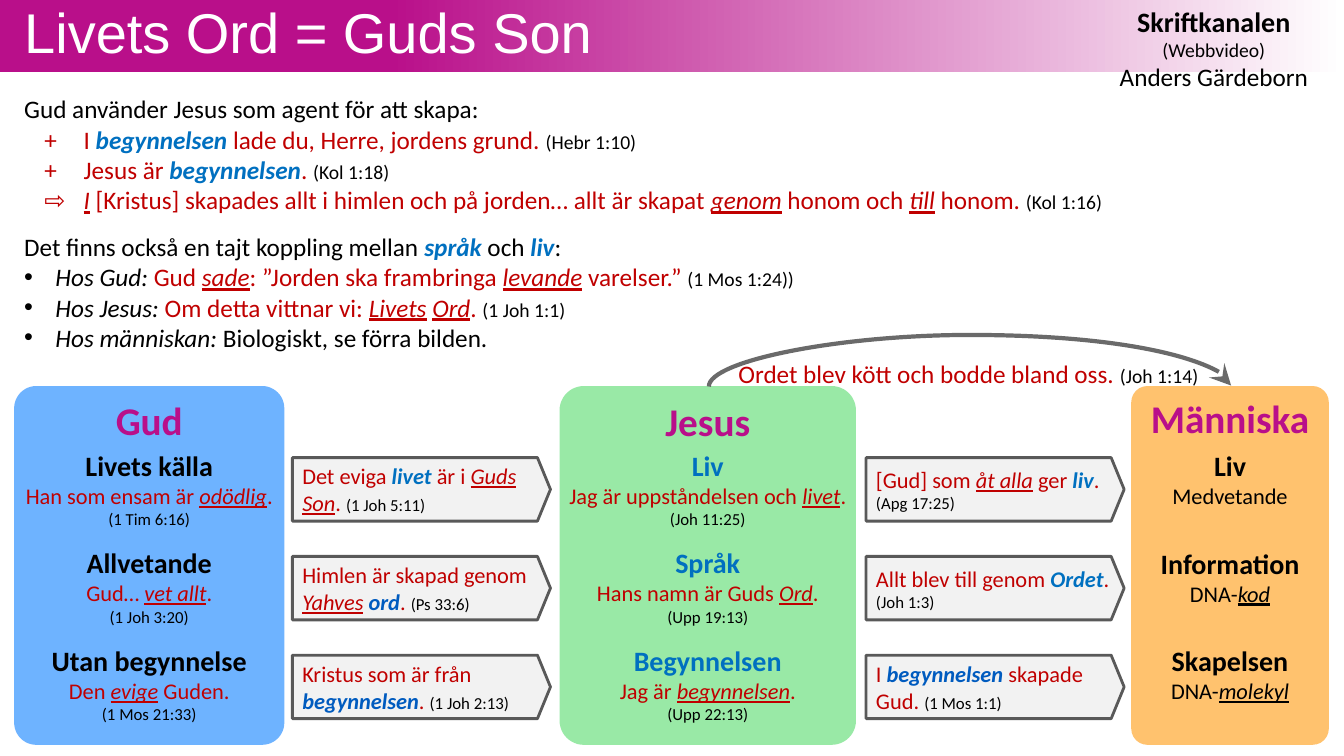
from lxml import etree
from pptx import Presentation
from pptx.dml.color import RGBColor
from pptx.enum.shapes import MSO_CONNECTOR, MSO_SHAPE
from pptx.enum.text import MSO_ANCHOR, PP_ALIGN
from pptx.oxml.ns import qn
from pptx.util import Inches, Pt

BLACK, RED, BLUE, DEEP_BLUE = "000000", "C00000", "0070C0", "005BBF"
PURPLE, WHITE = "B90F8A", "FFFFFF"
COLUMN_TOP, COLUMN_HEIGHT = 3.83, 3.56
ROW_TOP, ROW_STEP = 4.54, 0.98


def color(hex_string):
    """Return the colour for a hex string."""
    return RGBColor.from_string(hex_string)


def child(parent, tag, **attributes):
    """Append a drawing element with the given attributes."""
    return etree.SubElement(parent, qn(tag), attributes)


def write(paragraph, runs, size, font="Calibri"):
    """Write (text, colour, marks) runs; s is four points smaller, l two larger."""
    paragraph.font.name = font
    paragraph.font.size = Pt(size)
    for text, hex_string, marks in runs:
        run = paragraph.add_run()
        run.text = text
        run.font.color.rgb = color(hex_string)
        if "s" in marks or "l" in marks:
            run.font.size = Pt(size - 4 if "s" in marks else size + 2)
        if "b" in marks:
            run.font.bold = True
        if "i" in marks:
            run.font.italic = True
        if "u" in marks:
            run.font.underline = True


def prepare_frame(shape, margins, anchor=MSO_ANCHOR.TOP, wrap=True):
    """Set margins (left, top, right, bottom), anchor and wrapping."""
    frame = shape.text_frame
    frame.word_wrap = wrap
    frame.vertical_anchor = anchor
    (frame.margin_left, frame.margin_top,
     frame.margin_right, frame.margin_bottom) = map(Inches, margins)
    return frame


def add_text_box(slide, box, margins=(0, 0, 0, 0), **options):
    """Add a text box and return its text frame."""
    return prepare_frame(slide.shapes.add_textbox(*map(Inches, box)), margins, **options)


def add_shape(slide, kind, box, fill):
    """Add a flat filled shape without outline."""
    shape = slide.shapes.add_shape(kind, *map(Inches, box))
    shape.shadow.inherit = False
    shape.fill.solid()
    shape.fill.fore_color.rgb = color(fill)
    shape.line.fill.background()
    return shape


def next_paragraph(frame, index):
    """Return the first paragraph for index 0, otherwise a new one."""
    return frame.add_paragraph() if index else frame.paragraphs[0]


def add_header(slide, left, top, width, height):
    """Draw the gradient band with title and author."""
    band = add_shape(slide, MSO_SHAPE.RECTANGLE, (left, top, width, height), PURPLE)
    band.fill.gradient()
    band.fill.gradient_angle = 0
    for stop, position, hex_string in zip(band.fill.gradient_stops, (0.29, 1), (PURPLE, WHITE)):
        stop.position = position
        stop.color.rgb = color(hex_string)
    author = add_text_box(slide, (left + width - 2.57, top + 0.04, 2.56, 0.64),
                          (0.1, 0, 0.1, 0), wrap=False)
    lines = [[("Skriftkanalen", BLACK, "bl"), (" ", BLACK, ""), ("(Webbvideo)", BLACK, "s")],
             [("Anders Gärdeborn", BLACK, "")]]
    for index, runs in enumerate(lines):
        paragraph = next_paragraph(author, index)
        paragraph.alignment = PP_ALIGN.CENTER
        write(paragraph, runs, 18)
    title = add_text_box(slide, (left, top, width, height), (0.24, 0.05, 0.1, 0.05))
    title.paragraphs[0].line_spacing = 0.9
    write(title.paragraphs[0], [("Livets Ord = Guds Son", WHITE, "")], 40, "Arial")


def add_body(slide, left, top, width, height):
    """Write the two introductory lists."""
    frame = add_text_box(slide, (left, top, width, height), (0.24, 0.05, 0.1, 0.05))
    lines = [
        ("lead", [("Gud använder Jesus som agent för att skapa:", BLACK, "")]),
        ("tabs", [("\t+\tI ", RED, ""), ("begynnelsen", BLUE, "bi"),
                  (" lade du, Herre, jordens grund. ", RED, ""), ("(Hebr 1:10)", BLACK, "s")]),
        ("tabs", [("\t+\tJesus är ", RED, ""), ("begynnelsen", BLUE, "bi"),
                  (". ", RED, ""), ("(Kol 1:18)", BLACK, "s")]),
        ("tabs", [("\t⇨\t", RED, ""), ("I", RED, "iu"),
                  (" [Kristus] skapades allt i himlen och på jorden… allt är skapat ", RED, ""),
                  ("genom", RED, "iu"), (" honom och ", RED, ""), ("till", RED, "iu"),
                  (" honom. ", RED, ""), ("(Kol 1:16)", BLACK, "s")]),
        ("lead", [("Det finns också en tajt koppling mellan ", BLACK, ""), ("språk", BLUE, "bi"),
                  (" och ", BLACK, ""), ("liv", BLUE, "bi"), (":", BLACK, "")]),
        ("bullet", [("Hos Gud: ", BLACK, "i"), ("Gud ", RED, ""), ("sade", RED, "iu"),
                    (": ”Jorden ska frambringa ", RED, ""), ("levande", RED, "iu"),
                    (" varelser.” ", RED, ""), ("(1 Mos 1:24))", BLACK, "s")]),
        ("bullet", [("Hos Jesus: ", BLACK, "i"), ("Om detta vittnar vi: ", RED, ""),
                    ("Livets", RED, "iu"), (" ", RED, ""), ("Ord", RED, "iu"),
                    (". ", RED, ""), ("(1 Joh 1:1)", BLACK, "s")]),
        ("bullet", [("Hos människan: ", BLACK, "i"), ("Biologiskt, se förra bilden.", BLACK, "")]),
    ]
    for index, (kind, runs) in enumerate(lines):
        paragraph = next_paragraph(frame, index)
        properties = paragraph._p.get_or_add_pPr()
        if kind == "tabs":
            tab_list = child(properties, "a:tabLst")
            for position in (0.2, 0.59):
                child(tab_list, "a:tab", pos=str(Inches(position)), algn="l")
        elif kind == "bullet":
            properties.set("marL", str(Inches(0.31)))
            properties.set("indent", str(-Inches(0.31)))
            child(properties, "a:buFont", typeface="Arial")
            child(properties, "a:buChar", char="•")
        elif index:
            paragraph.space_before = Pt(12)
        write(paragraph, runs, 18)


def add_column(slide, left, top, width, height, fill, heading, heading_color, groups, gap):
    """Draw a rounded column with a heading and groups of centred lines."""
    panel = add_shape(slide, MSO_SHAPE.ROUNDED_RECTANGLE, (left, top, width, height), fill)
    panel.adjustments[0] = 0.082
    child(panel.fill.fore_color._xFill.find(qn("a:srgbClr")), "a:alpha", val="57000")
    frame = prepare_frame(panel, (0, 0.04, 0, 0))
    frame.paragraphs[0].alignment = PP_ALIGN.CENTER
    write(frame.paragraphs[0], [(heading, PURPLE, "b")], 28)
    details = add_text_box(slide, (left, top + 0.62, width, height - 0.8))
    for number, (name, verse, reference) in enumerate(groups):
        lines = [([(name, heading_color, "b")], 20), (verse, 16)]
        if reference:
            lines.append(([(reference, BLACK, "")], 12))
        for index, (runs, size) in enumerate(lines):
            paragraph = next_paragraph(details, number + index)
            paragraph.alignment = PP_ALIGN.CENTER
            if number and not index:
                paragraph.space_before = Pt(gap)
            write(paragraph, runs, size)


def add_arrows(slide, left, top, width, height, verses):
    """Stack the arrows that hold the verses between two columns."""
    for row, runs in enumerate(verses):
        arrow = add_shape(slide, MSO_SHAPE.RIGHT_ARROW,
                          (left, top + row * ROW_STEP, width, height), "F2F2F2")
        arrow.adjustments[0], arrow.adjustments[1] = 1, 0.205
        arrow.line.color.rgb = color("595959")
        arrow.line.width = Pt(2)
        frame = prepare_frame(arrow, (0.1, 0.05, 0, 0.05), MSO_ANCHOR.MIDDLE)
        frame.paragraphs[0].alignment = PP_ALIGN.LEFT
        write(frame.paragraphs[0], runs, 16)


def add_arc(slide, left, top, width, height):
    """Draw the curved arrow from Jesus to Människa with its verse."""
    caption = add_text_box(slide, (left + 0.15, top - 0.1, 4.85, 0.98), anchor=MSO_ANCHOR.MIDDLE)
    caption.paragraphs[0].alignment = PP_ALIGN.CENTER
    write(caption.paragraphs[0], [("Ordet blev kött och bodde bland oss. ", RED, ""),
                                  ("(Joh 1:14)", BLACK, "s")], 18)
    middle, base, thin = left + width / 2, top + height, 0.01
    arc = slide.shapes.add_connector(
        MSO_CONNECTOR.CURVE, Inches(middle + thin / 2), Inches(base + width / 2),
        Inches(middle - thin / 2), Inches(base - width / 2))
    arc._element.spPr.find(qn("a:xfrm")).set("rot", "5400000")
    guides = arc._element.spPr.find(qn("a:prstGeom")).get_or_add_avLst()
    child(guides, "a:gd", name="adj1", fmla=f"val {round(height / thin * 100000)}")
    arc.line.color.rgb = color("6A6A6A")
    arc.line.width = Pt(3)
    child(arc.line._get_or_add_ln(), "a:tailEnd", type="stealth", w="lg", len="lg")
    child(arc._element.spPr, "a:effectLst")


def main():
    """Build and save the slide."""
    presentation = Presentation()
    presentation.slide_width, presentation.slide_height = Inches(13.33), Inches(7.5)
    slide = presentation.slides.add_slide(presentation.slide_layouts[6])
    add_header(slide, 0, 0, 13.33, 0.71)
    add_body(slide, 0, 0.88, 12, 2.69)
    dot = (".", RED, "")
    columns = [
        (0.14, 2.68, "007AFF", "Gud", BLACK, 12, [
            ("Livets källa", [("Han som ensam är ", RED, ""), ("odödlig", RED, "iu"), dot], "(1 Tim 6:16)"),
            ("Allvetande", [("Gud… ", RED, ""), ("vet allt", RED, "iu"), dot], "(1 Joh 3:20)"),
            ("Utan begynnelse", [("Den ", RED, ""), ("evige", RED, "iu"), (" Guden.", RED, "")], "(1 Mos 21:33)")]),
        (5.55, 2.94, "4CD964", "Jesus", BLUE, 12, [
            ("Liv", [("Jag är uppståndelsen och ", RED, ""), ("livet", RED, "iu"), dot], "(Joh 11:25)"),
            ("Språk", [("Hans namn är Guds ", RED, ""), ("Ord", RED, "iu"), dot], "(Upp 19:13)"),
            ("Begynnelsen", [("Jag är ", RED, ""), ("begynnelsen", RED, "iu"), dot], "(Upp 22:13)")]),
        (11.22, 1.96, "FF9500", "Människa", BLACK, 26.6, [
            ("Liv", [("Medvetande", BLACK, "")], ""),
            ("Information", [("DNA-", BLACK, ""), ("kod", BLACK, "iu")], ""),
            ("Skapelsen", [("DNA-", BLACK, ""), ("molekyl", BLACK, "iu")], "")])]
    for left, width, fill, heading, heading_color, gap, groups in columns:
        add_column(slide, left, COLUMN_TOP, width, COLUMN_HEIGHT, fill, heading, heading_color, groups, gap)
    stop = (". ", RED, "")
    add_arrows(slide, 2.9, ROW_TOP, 2.56, 0.63, [
        [("Det eviga ", RED, ""), ("livet", BLUE, "bi"), (" är i ", RED, ""),
         ("Guds Son", RED, "iu"), stop, ("(1 Joh 5:11)", BLACK, "s")],
        [("Himlen är skapad genom ", RED, ""), ("Yahves", RED, "iu"), (" ord", DEEP_BLUE, "bi"),
         stop, ("(Ps 33:6)", BLACK, "s")],
        [("Kristus som är från ", RED, ""), ("begynnelsen", DEEP_BLUE, "bi"), stop, ("(1 Joh 2:13)", BLACK, "s")]])
    add_arrows(slide, 8.59, ROW_TOP, 2.56, 0.63, [
        [("[Gud] som ", RED, ""), ("åt alla", RED, "iu"), (" ger ", RED, ""), ("liv", BLUE, "bi"),
         stop, ("(Apg 17:25)", BLACK, "s")],
        [("Allt blev till genom ", RED, ""), ("Ordet", BLUE, "bi"), stop, ("(Joh 1:3)", BLACK, "s")],
        [("I ", RED, ""), ("begynnelsen ", DEEP_BLUE, "bi"), ("skapade Gud. ", RED, ""),
         ("(1 Mos 1:1)", BLACK, "s")]])
    add_arc(slide, 7.03, 3.31, 5.18, 0.52)
    presentation.save("out.pptx")


if __name__ == "__main__":
    main()
